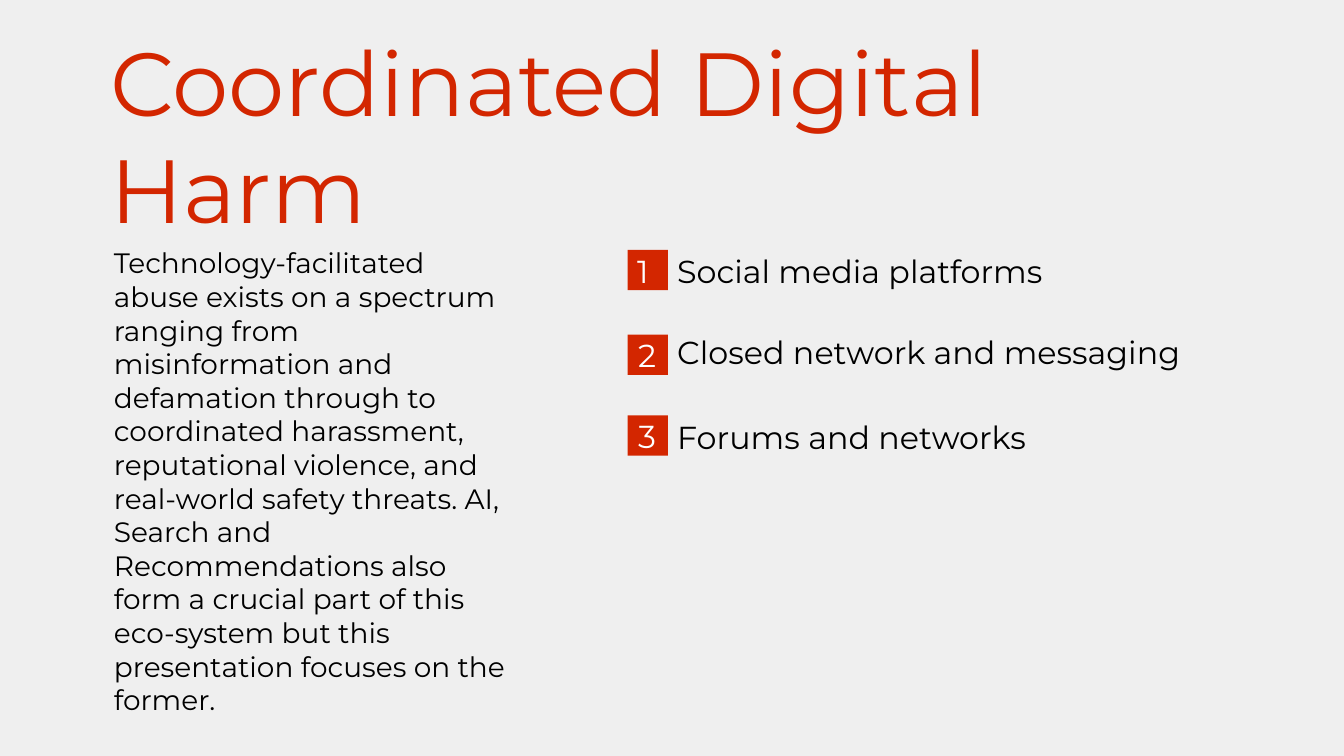
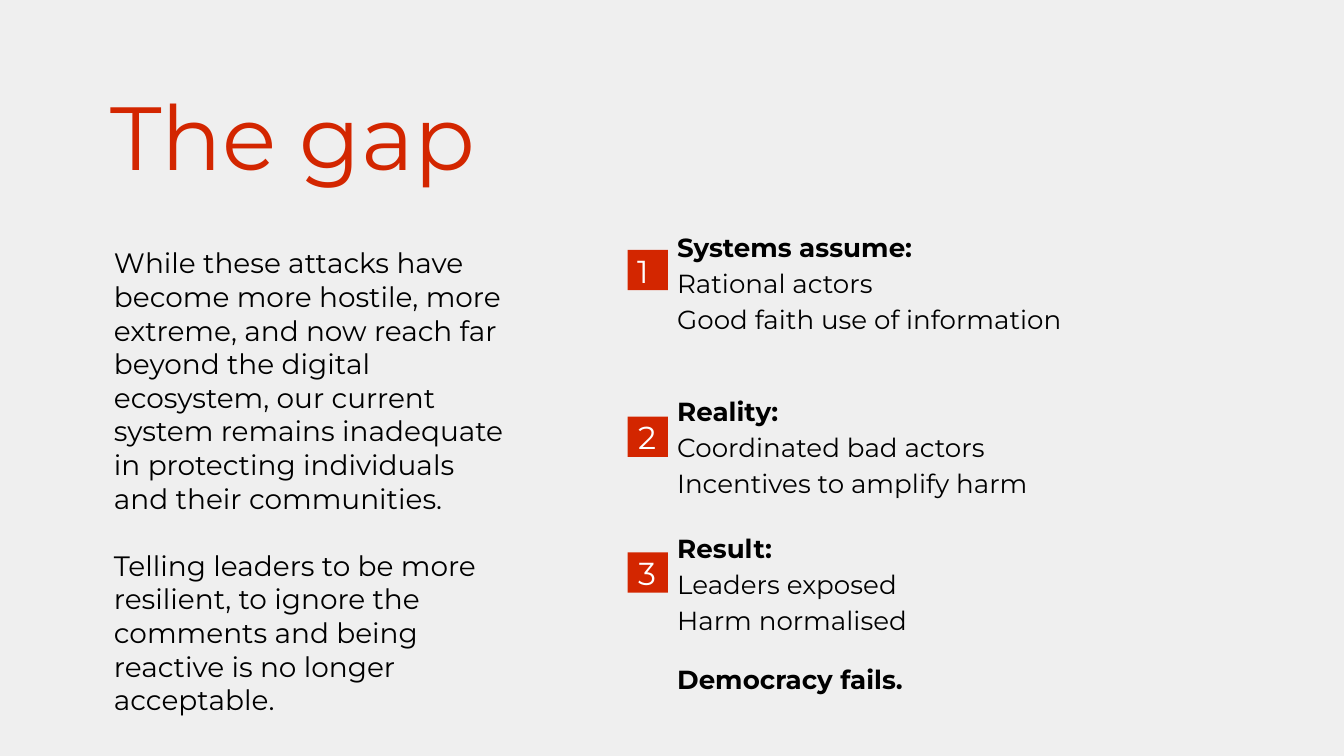
import pptx
import pptx.util
import pptx.dml.color
import pptx.enum.text
import pptx.enum.shapes

Inches, Pt = pptx.util.Inches, pptx.util.Pt
PP_ALIGN, MSO_ANCHOR = pptx.enum.text.PP_ALIGN, pptx.enum.text.MSO_ANCHOR

FONT = "Montserrat"
COLORS = {"paper": "EFEFEF", "accent": "D32600", "ink": "000000", "white": "FFFFFF"}

SLIDES = [
    {
        "title": "Coordinated Digital Harm",
        "body": [
            "Technology-facilitated abuse exists on a spectrum ranging from misinformation "
            "and defamation through to coordinated harassment, reputational violence, and "
            "real-world safety threats. AI, Search and Recommendations also form a crucial "
            "part of this eco-system but this presentation focuses on the former.",
        ],
        "items": [
            {"badge_top": 1.86, "top": 1.77, "text": "Social media platforms"},
            {"badge_top": 2.49, "top": 2.38, "text": "Closed network and messaging"},
            {"badge_top": 3.09, "top": 3.01, "text": "Forums and networks"},
        ],
    },
    {
        "title": "The gap",
        "body": [
            "While these attacks have become more hostile, more extreme, and now reach far "
            "beyond the digital ecosystem, our current system remains inadequate in "
            "protecting individuals and their communities.",
            "Telling leaders to be more resilient, to ignore the comments and being "
            "reactive is no longer acceptable.",
        ],
        "items": [
            {"badge_top": 1.86, "top": 1.59, "heading": "Systems assume:",
             "lines": ["Rational actors", "Good faith use of information"]},
            {"badge_top": 3.1, "top": 2.81, "heading": "Reality:",
             "lines": ["Coordinated bad actors", "Incentives to amplify harm"]},
            {"badge_top": 4.11, "top": 3.83, "heading": "Result:",
             "lines": ["Leaders exposed", "Harm normalised"],
             "closing": "Democracy fails."},
        ],
    },
]

BADGE_LEFT, BADGE_SIZE = 4.67, 0.3
NUMBER_LEFT, NUMBER_WIDTH, NUMBER_HEIGHT, NUMBER_RISE = 4.64, 0.35, 0.49, 0.09
LABEL_LEFT, LABEL_WIDTH, LABEL_HEIGHT = 4.94, 4.47, 0.74


def rgb(name):
    return pptx.dml.color.RGBColor.from_string(COLORS[name])


def setup_frame(tf, anchor=MSO_ANCHOR.TOP):
    tf.word_wrap = True
    tf.auto_size = pptx.enum.text.MSO_AUTO_SIZE.NONE
    tf.vertical_anchor = anchor
    tf.margin_left = tf.margin_right = tf.margin_top = tf.margin_bottom = Inches(0.1)
    return tf


def add_box(s, left, top, width, height):
    sp = s.shapes.add_textbox(Inches(left), Inches(top), Inches(width), Inches(height))
    return setup_frame(sp.text_frame)


def add_run(p, text, size, color="ink", bold=False):
    r = p.add_run()
    r.text = text
    r.font.name = FONT
    r.font.size = Pt(size)
    r.font.bold = bold
    r.font.color.rgb = rgb(color)


def add_title(s, text):
    sp = s.shapes.title
    sp.left, sp.top, sp.width, sp.height = map(Inches, (0.72, 0.59, 8.63, 0.82))
    p = setup_frame(sp.text_frame, MSO_ANCHOR.MIDDLE).paragraphs[0]
    p.alignment = PP_ALIGN.LEFT
    add_run(p, text, 48, "accent")


def add_body(s, paragraphs):
    tf = add_box(s, 0.75, 1.73, 3.14, 1.83)
    for i, text in enumerate(paragraphs):
        p = tf.add_paragraph() if i else tf.paragraphs[0]
        if i:
            p.space_before = Pt(18)
        add_run(p, text, 15)


def add_badge(s, number, top):
    sp = s.shapes.add_shape(pptx.enum.shapes.MSO_SHAPE.RECTANGLE, Inches(BADGE_LEFT),
                            Inches(top), Inches(BADGE_SIZE), Inches(BADGE_SIZE))
    sp.shadow.inherit = False
    sp.fill.solid()
    sp.fill.fore_color.rgb = rgb("accent")
    sp.line.fill.background()
    tf = add_box(s, NUMBER_LEFT, top - NUMBER_RISE, NUMBER_WIDTH, NUMBER_HEIGHT)
    p = tf.paragraphs[0]
    p.alignment = PP_ALIGN.CENTER
    add_run(p, f"{number} ", 17, "white")


def add_label(s, item):
    tf = add_box(s, LABEL_LEFT, item["top"], LABEL_WIDTH, LABEL_HEIGHT)
    p = tf.paragraphs[0]
    if "text" in item:
        add_run(p, item["text"], 17)
        return
    add_run(p, item["heading"], 14, bold=True)
    for line in item["lines"]:
        p.add_line_break()
        add_run(p, line, 14)
    if "closing" in item:
        add_run(tf.add_paragraph(), item["closing"], 14, bold=True)
    for p in tf.paragraphs:
        p.line_spacing = 1.15
        p.space_before = Pt(12)
    tf.paragraphs[-1].space_after = Pt(12)


def main():
    prs = pptx.Presentation()
    prs.slide_width = Inches(10)
    prs.slide_height = prs.slide_width * 9 // 16
    for content in SLIDES:
        s = prs.slides.add_slide(prs.slide_layouts[5])
        s.background.fill.solid()
        s.background.fill.fore_color.rgb = rgb("paper")
        add_title(s, content["title"])
        add_body(s, content["body"])
        for number, item in enumerate(content["items"], 1):
            add_label(s, item)
            add_badge(s, number, item["badge_top"])
    prs.save("out.pptx")


if __name__ == "__main__":
    main()
